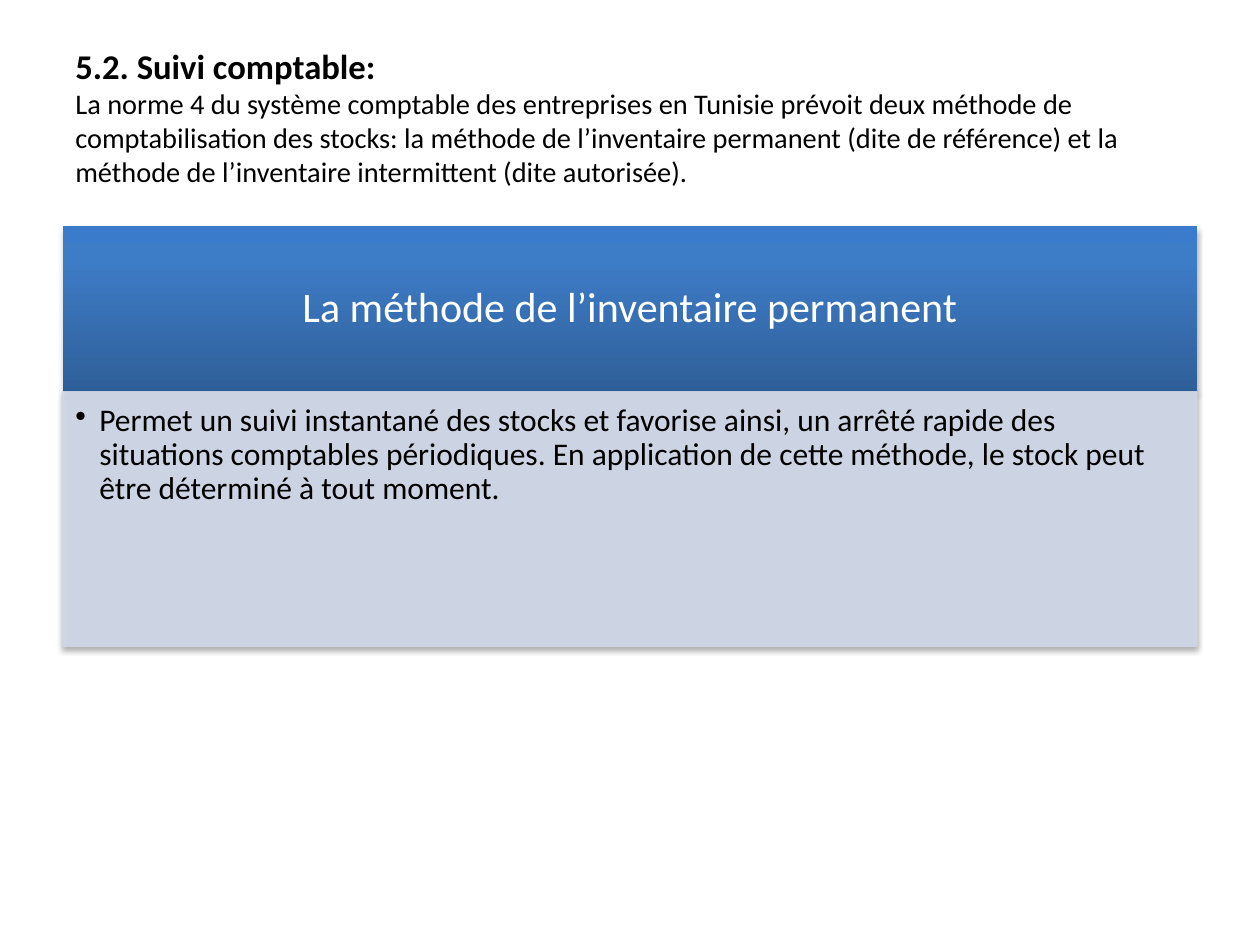
from lxml import etree
from pptx import Presentation
from pptx import util as u
from pptx.dml.color import RGBColor
from pptx.enum import shapes, text
from pptx.oxml import parse_xml
from pptx.oxml.ns import nsdecls, qn

BLACK = RGBColor(0, 0, 0)
WHITE = RGBColor(0xFF, 0xFF, 0xFF)
PALE = RGBColor(0xD0, 0xD8, 0xE8)
DARK = RGBColor(0x2F, 0x5F, 0x99)
MID = RGBColor(0x3D, 0x7C, 0xC7)
BRIGHT = RGBColor(0x3A, 0x7C, 0xCB)
LEFT, WIDTH = 0.5, 9


def add_text(home, top, high, runs, anchor, pads, form):
    """Add a text box with one paragraph; line breaks part the runs."""
    box = home.add_textbox(u.Inches(LEFT), u.Inches(top), u.Inches(WIDTH), u.Inches(high))
    frame = box.text_frame
    frame.word_wrap = True
    frame.vertical_anchor = anchor
    for side, pad in zip(("left", "top", "right", "bottom"), pads):
        setattr(frame, "margin_" + side, u.Inches(pad))
    para = frame.paragraphs[0]
    for key, val in form.items():
        setattr(para, key, val)
    for i, (words, size, bold, color) in enumerate(runs):
        if i:
            para.add_line_break()
        run = para.add_run()
        run.text = words
        for key, val in {"name": "Calibri", "size": u.Pt(size), "bold": bold}.items():
            setattr(run.font, key, val)
        run.font.color.rgb = color
    return para


def add_panel(home, top, high):
    """Add a full-width rectangle with a soft shadow below it."""
    rect = home.add_shape(shapes.MSO_SHAPE.RECTANGLE, u.Inches(LEFT), u.Inches(top),
                          u.Inches(WIDTH), u.Inches(high))
    rect.line.fill.background()
    rect._element.spPr.append(parse_xml(
        f'<a:effectLst {nsdecls("a")}><a:outerShdw blurRad="{u.Pt(3.1)}" dist="{u.Pt(1.8)}" '
        'dir="5400000" rotWithShape="0"><a:srgbClr val="000000"><a:alpha val="35000"/>'
        '</a:srgbClr></a:outerShdw></a:effectLst>'))
    return rect


deck = Presentation()
deck.slide_width, deck.slide_height = u.Inches(10), u.Inches(7.5)
slide = deck.slides.add_slide(deck.slide_layouts[6])

# Title and introduction
add_text(slide.shapes, 0.3, 1.25, [
    ("5.2. Suivi comptable:", 19.8, True, BLACK),
    ("La norme 4 du système comptable des entreprises en Tunisie prévoit deux méthode de "
     "comptabilisation des stocks: la méthode de l’inventaire permanent (dite de référence) "
     "et la méthode de l’inventaire intermittent (dite autorisée).", 16.2, False, BLACK),
], text.MSO_ANCHOR.MIDDLE, (0.1, 0.05, 0.1, 0.05), {})

group = slide.shapes.add_group_shape().shapes

# Header band, dark at the foot
top, high = 1.79, 1.32
band = add_panel(group, top, high)
stops = "".join(f'<a:gs pos="{pos * 1000}"><a:srgbClr val="{color}"/></a:gs>'
                for pos, color in ((0, DARK), (80, MID), (100, BRIGHT)))
band._element.spPr.find(qn("a:prstGeom")).addnext(parse_xml(
    f'<a:gradFill rotWithShape="1" {nsdecls("a")}><a:gsLst>{stops}</a:gsLst>'
    '<a:lin ang="16200000" scaled="0"/></a:gradFill>'))
add_text(group, top, high, [("La méthode de l’inventaire permanent", 24, False, WHITE)],
         text.MSO_ANCHOR.MIDDLE, (0.19, 0.11, 0.19, 0.11),
         {"alignment": text.PP_ALIGN.CENTER, "line_spacing": 0.9})

# Body panel, slightly see-through
top, high = top + high, 2.02
body = add_panel(group, top, high)
body.fill.solid()
body.fill.fore_color.rgb = PALE
body.line.color.rgb = PALE
body.line.width = u.Pt(0.75)
for color in body._element.spPr.findall(".//" + qn("a:srgbClr")):
    if color.get("val") == str(PALE):
        etree.SubElement(color, qn("a:alpha")).set("val", "90000")
para = add_text(group, top, high, [
    ("Permet un suivi instantané des stocks et favorise ainsi, un arrêté rapide des "
     "situations comptables périodiques. En application de cette méthode, le stock peut "
     "être déterminé à tout moment.", 18, False, BLACK),
], text.MSO_ANCHOR.TOP, (0.1, 0.1, 0.14, 0.16), {"level": 1, "line_spacing": 0.9})
props = para._p.get_or_add_pPr()
props.set("marL", str(u.Inches(0.19)))
props.set("indent", str(-u.Inches(0.19)))
etree.SubElement(props, qn("a:buChar")).set("char", "•")

deck.save("out.pptx")
